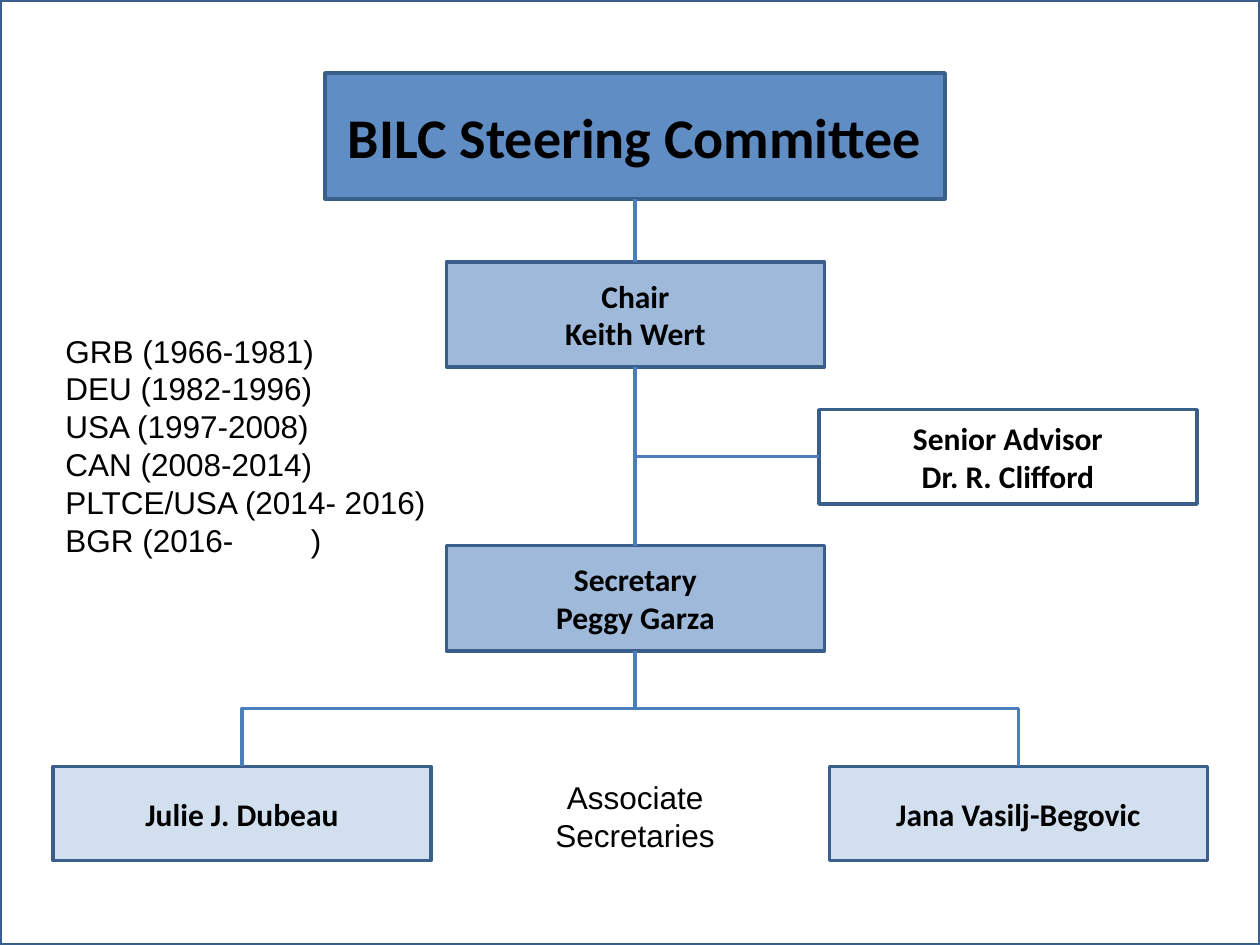
from lxml import etree
from pptx import Presentation
from pptx import util as u
from pptx.dml.color import RGBColor
from pptx.enum import shapes, text
from pptx.oxml.ns import qn

BLUE, BORDER, LINK = "4F81BD", "3A5F8C", "4B7EBC"
BLACK, WHITE = "000000", "FFFFFF"


def color(value):
    return RGBColor.from_string(value)


class Chart:
    """Organisation chart style, drawn on one page. Lengths are in cm."""

    def __init__(self, page):
        self.page = page
        self.line_width = u.Pt(2)

    def outline(self, shape, fill=None, opacity=100):
        shape.line.color.rgb = color(BORDER)
        shape.line.width = self.line_width
        if fill is None:
            shape.fill.background()
            return
        shape.fill.solid()
        shape.fill.fore_color.rgb = color(fill)
        if opacity < 100:
            tint = shape._element.spPr.find(qn("a:solidFill")).find(qn("a:srgbClr"))
            etree.SubElement(tint, qn("a:alpha")).set("val", str(opacity * 1000))

    def add_lines(self, shape, lines, size=18, font="Calibri", bold=True,
                  align=text.PP_ALIGN.CENTER, anchor=text.MSO_ANCHOR.MIDDLE):
        frame = shape.text_frame
        frame.word_wrap = True
        frame.auto_size = text.MSO_AUTO_SIZE.NONE
        frame.vertical_anchor = anchor
        for index, line in enumerate(lines):
            para = frame.add_paragraph() if index else frame.paragraphs[0]
            para.alignment = align
            span = para.add_run()
            span.text = line
            span.font.name, span.font.size, span.font.bold = font, u.Pt(size), bold
            span.font.color.rgb = color(BLACK)
        return frame

    def frame(self, width, height):
        border = self.page.shapes.add_shape(
            shapes.MSO_SHAPE.RECTANGLE, 0, 0, u.Cm(width), u.Cm(height))
        border.shadow.inherit = False
        self.outline(border, WHITE)
        # The title stands in front of the frame
        border._element.addnext(self.page.shapes.title._element)

    def title(self, left, top, width, height, line):
        box = self.page.shapes.title
        box.left, box.top = u.Cm(left), u.Cm(top)
        box.width, box.height = u.Cm(width), u.Cm(height)
        self.outline(box, BLUE, 90)
        self.add_lines(box, [line], size=32)

    def role(self, left, top, height, lines, fill=None, opacity=100, width=7.62):
        box = self.page.shapes.add_shape(
            shapes.MSO_SHAPE.FLOWCHART_PROCESS,
            u.Cm(left), u.Cm(top), u.Cm(width), u.Cm(height))
        box.shadow.inherit = False
        self.outline(box, fill, opacity)
        self.add_lines(box, lines)

    def label(self, left, top, width, height, lines, align=text.PP_ALIGN.LEFT):
        box = self.page.shapes.add_textbox(
            u.Cm(left), u.Cm(top), u.Cm(width), u.Cm(height))
        return self.add_lines(box, lines, font="Arial", bold=False, align=align,
                              anchor=text.MSO_ANCHOR.TOP)

    def link(self, x1, y1, x2, y2, kind=shapes.MSO_CONNECTOR.STRAIGHT):
        line = self.page.shapes.add_connector(
            kind, u.Cm(x1), u.Cm(y1), u.Cm(x2), u.Cm(y2))
        line.line.color.rgb = color(LINK)
        line.line.width = self.line_width
        etree.SubElement(line._element.spPr, qn("a:effectLst"))
        return line

    def branch(self, x1, y1, x2, y2):
        """Elbow that leaves upwards: a sideways elbow turned by 270 degrees."""
        middle_x, middle_y = (x1 + x2) / 2, (y1 + y2) / 2
        run, rise = (x1 - x2) / 2, (y1 - y2) / 2
        elbow = self.link(middle_x - rise, middle_y + run,
                          middle_x + rise, middle_y - run,
                          shapes.MSO_CONNECTOR.ELBOW)
        elbow._element.spPr.find(qn("a:xfrm")).set("rot", str(270 * 60000))


def main():
    deck = Presentation()
    deck.slide_width, deck.slide_height = u.Cm(25.4), u.Cm(19.05)
    page = deck.slides.add_slide(deck.slide_layouts[5])
    chart = Chart(page)
    axis = 12.8

    # Frame and title
    chart.frame(25.4, 19.05)
    chart.title(6.55, 1.47, 12.5, 2.54, "BILC Steering Committee")

    # Roles
    chart.role(9, 5.28, 2.12, ["Chair", "Keith Wert"], BLUE, 55)
    chart.role(16.51, 8.26, 1.9, ["Senior Advisor", "Dr. R. Clifford"])
    chart.role(9, 11, 2.12, ["Secretary", "Peggy Garza"], BLUE, 55)

    # Associate secretaries, each joined to the secretary
    for left, name in ((16.72, "Jana Vasilj-Begovic"), (1.07, "Julie J. Dubeau")):
        chart.role(left, 15.45, 1.9, [name], BLUE, 25)
        chart.branch(left + 3.81, 15.45, axis, 13.12)
    chart.label(10.8, 15.56, 4.01, 1.8, ["Associate Secretaries"],
                text.PP_ALIGN.CENTER)

    # Straight links
    chart.link(axis, 4.01, axis, 5.28)
    chart.link(axis, 7.4, axis, 11)
    chart.link(16.51, 9.2, axis, 9.2)

    # Chairing nations; a tab stop holds the open end year
    history = chart.label(1.07, 6.56, 8.46, 4.88, [
        "GRB (1966-1981)", "DEU (1982-1996)", "USA (1997-2008)",
        "CAN (2008-2014)", "PLTCE/USA (2014- 2016)", "BGR (2016-\t)"])
    tabs = etree.SubElement(history.paragraphs[-1]._p.get_or_add_pPr(), qn("a:tabLst"))
    etree.SubElement(tabs, qn("a:tab"), pos=str(u.Cm(4.95)), algn="l")

    deck.save("out.pptx")


if __name__ == "__main__":
    main()
